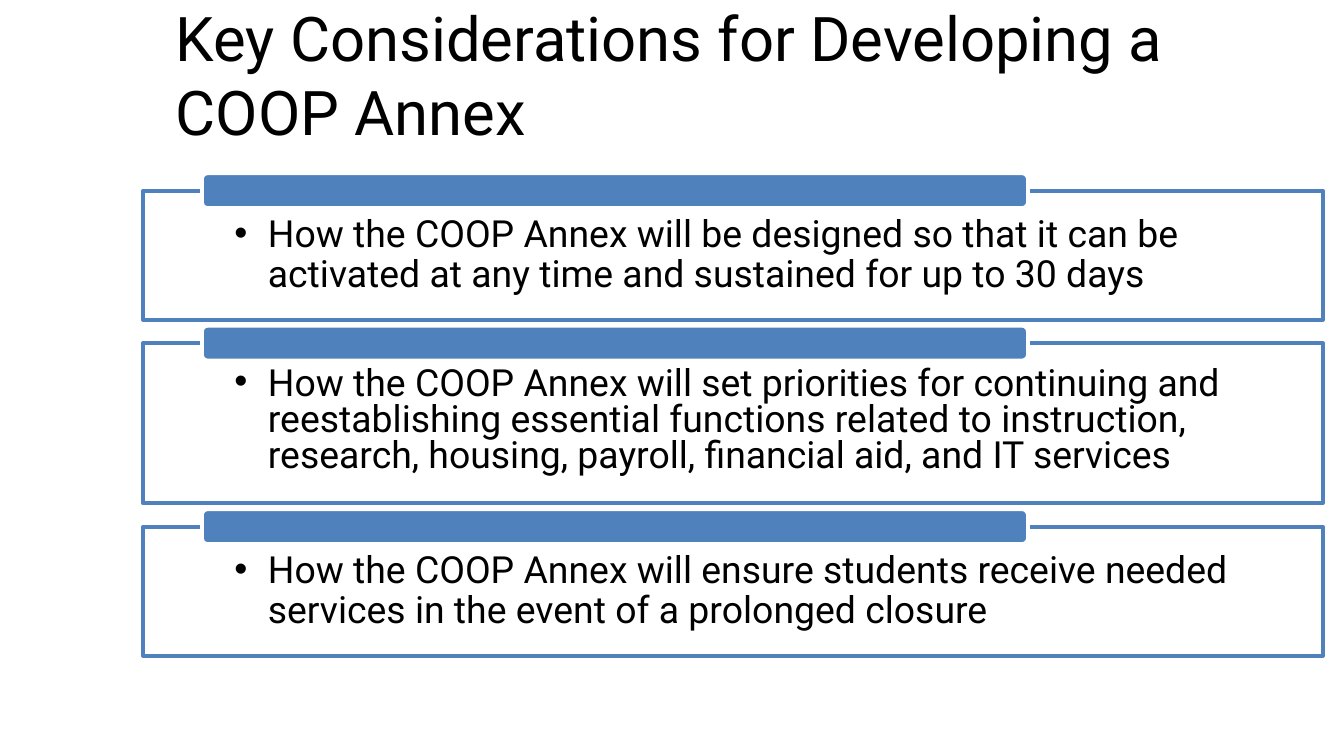
from lxml import etree
from pptx import Presentation
from pptx.dml.color import RGBColor as RGB
from pptx.enum.shapes import MSO_SHAPE as Shape
from pptx.enum.text import MSO_ANCHOR as Anchor, PP_ALIGN as Align
from pptx.oxml.ns import qn
from pptx.util import Pt

COLORS = {"text": "000000", "blue": "4F81BD", "white": "FFFFFF"}
FONT = "Roboto"
GAP = 12.6

# text, box height, line spacing
POINTS = [
    ("How the COOP Annex will be designed so that it can be activated "
     "at any time and sustained for up to 30 days", 69.1, 0.9),
    ("How the COOP Annex will set priorities for continuing and "
     "reestablishing essential functions related to instruction, research, "
     "housing, payroll, financial aid, and IT services", 85.7, 0.8),
    ("How the COOP Annex will ensure students receive needed services "
     "in the event of a prolonged closure", 69.1, 0.9),
]


def color(name):
    return RGB.from_string(COLORS[name])


def style(para, size):
    para.alignment = Align.LEFT
    para.font.name = FONT
    para.font.size = Pt(size)
    para.font.color.rgb = color("text")


def add_bullet(para, indent):
    props = para._p.get_or_add_pPr()
    props.set("marL", str(Pt(indent)))
    props.set("indent", str(-Pt(indent)))
    etree.SubElement(props, qn("a:buFont")).set("typeface", "Arial")
    etree.SubElement(props, qn("a:buChar")).set("char", "•")


def add_block(slide, kind, x, y, w, h, fill, line):
    block = slide.shapes.add_shape(kind, Pt(x), Pt(y), Pt(w), Pt(h))
    block.shadow.inherit = False
    block.fill.solid()
    block.fill.fore_color.rgb = color(fill)
    block.line.color.rgb = color(line)
    block.line.width = Pt(2)
    return block


def add_title(slide, x, y, w, h, text):
    frame = slide.shapes.add_textbox(Pt(x), Pt(y), Pt(w), Pt(h)).text_frame
    frame.word_wrap = True
    frame.vertical_anchor = Anchor.MIDDLE
    para = frame.paragraphs[0]
    para.text = text
    style(para, 33)


def add_point(slide, x, y, w, h, text, spacing):
    """Outlined box of text with a blue bar across its top edge."""
    box = add_block(slide, Shape.RECTANGLE, x, y, w, h, "white", "blue")
    frame = box.text_frame
    frame.word_wrap = True
    frame.vertical_anchor = Anchor.TOP
    frame.margin_left = frame.margin_right = Pt(49)
    frame.margin_top = Pt(13)
    frame.margin_bottom = Pt(11.5)
    para = frame.paragraphs[0]
    para.text = text
    para.line_spacing = spacing
    add_bullet(para, 18)
    style(para, 20)
    add_block(slide, Shape.ROUNDED_RECTANGLE, x + 31.7, y - 9.4,
              w * 0.7, 18.7, "blue", "white")


def add_list(slide, x, y, w):
    for text, h, spacing in POINTS:
        add_point(slide, x, y, w, h, text, spacing)
        y += h + GAP


def main():
    deck = Presentation()
    deck.slide_width, deck.slide_height = Pt(720), Pt(405)
    slide = deck.slides.add_slide(deck.slide_layouts[6])
    add_title(slide, 87.1, 5.8, 561.6, 67.7,
              "Key Considerations for Developing a COOP Annex")
    add_list(slide, 76.5, 102.2, 632.2)
    deck.save("out.pptx")


if __name__ == "__main__":
    main()
